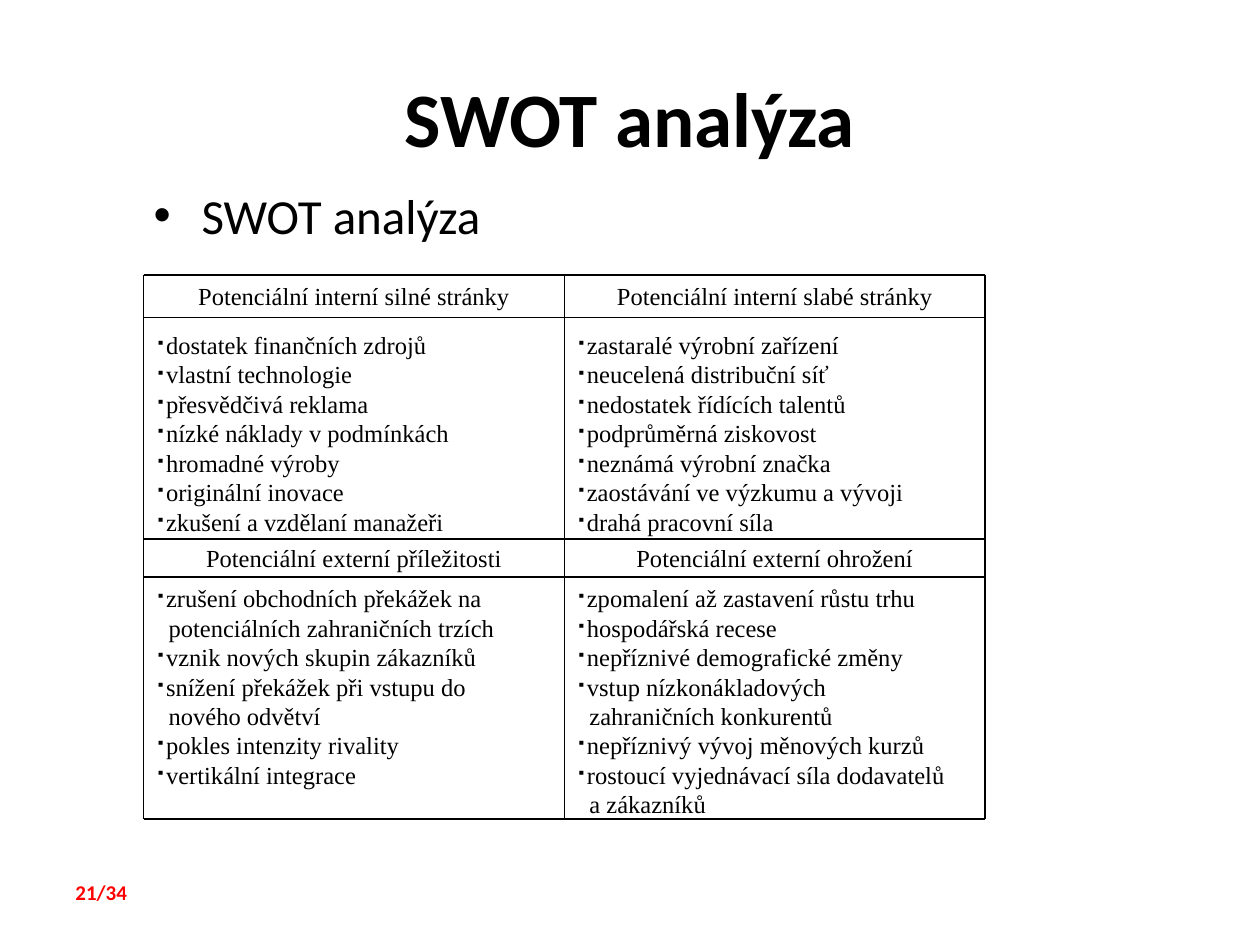
from lxml.etree import SubElement
from pptx import Presentation
from pptx.dml.color import RGBColor
from pptx.enum.shapes import MSO_CONNECTOR
from pptx.enum.text import MSO_ANCHOR, PP_ALIGN
from pptx.oxml.ns import qn
from pptx.util import Inches, Pt

BLACK = RGBColor(0, 0, 0)
RED = RGBColor(255, 0, 0)
HEADING_FONT = "Calibri"
GRID_FONT = "Times New Roman"

# Each row of quadrants holds (heading, items); a line break starts a continuation line.
INTERNAL = [
    ("Potenciální interní silné stránky", [
        "dostatek finančních zdrojů",
        "vlastní technologie",
        "přesvědčivá reklama",
        "nízké náklady v\u00a0podmínkách",
        "hromadné výroby",
        "originální inovace",
        "zkušení a vzdělaní manažeři",
    ]),
    ("Potenciální interní slabé stránky", [
        "zastaralé výrobní zařízení",
        "neucelená distribuční síť",
        "nedostatek řídících talentů",
        "podprůměrná ziskovost",
        "neznámá výrobní značka",
        "zaostávání ve výzkumu a vývoji",
        "drahá pracovní síla",
    ]),
]
EXTERNAL = [
    ("Potenciální externí příležitosti", [
        "zrušení obchodních překážek na\npotenciálních zahraničních trzích",
        "vznik nových skupin zákazníků",
        "snížení překážek při vstupu do\nnového odvětví",
        "pokles intenzity rivality",
        "vertikální integrace",
    ]),
    ("Potenciální externí ohrožení", [
        "zpomalení až zastavení růstu trhu",
        "hospodářská recese",
        "nepříznivé demografické změny",
        "vstup nízkonákladových\nzahraničních konkurentů",
        "nepříznivý vývoj měnových kurzů",
        "rostoucí vyjednávací síla dodavatelů\na zákazníků",
    ]),
]


def place(shape, left, top, width, height):
    shape.left, shape.top = Inches(left), Inches(top)
    shape.width, shape.height = Inches(width), Inches(height)


def set_font(paragraph, name, size, color=BLACK, bold=False):
    font = paragraph.font
    font.name, font.size, font.bold = name, Pt(size), bold
    font.color.rgb = color


def set_bullet(paragraph, char, margin, hanging, percent=100):
    properties = paragraph._p.get_or_add_pPr()
    properties.set("marL", str(Inches(margin)))
    properties.set("indent", str(-Inches(hanging)))
    if char:
        SubElement(properties, qn("a:buSzPct"), val=str(percent * 1000))
        SubElement(properties, qn("a:buChar"), char=char)
    else:
        SubElement(properties, qn("a:buNone"))


def add_text_frame(slide, left, top, width, height):
    box = slide.shapes.add_textbox(
        Inches(left), Inches(top), Inches(width), Inches(height))
    box.text_frame.word_wrap = True
    return box.text_frame


def add_rule(slide, x1, y1, x2, y2):
    rule = slide.shapes.add_connector(
        MSO_CONNECTOR.STRAIGHT, Inches(x1), Inches(y1), Inches(x2), Inches(y2))
    rule.line.color.rgb = BLACK
    rule.line.width = Pt(1)
    SubElement(rule._element.spPr, qn("a:effectLst"))


def fill_title(slide, left, top, width, height):
    title = slide.shapes.title
    place(title, left, top, width, height)
    title.text_frame.text = "SWOT analýza"
    set_font(title.text_frame.paragraphs[0], HEADING_FONT, 44, bold=True)


def fill_body(slide, left, top, width, height):
    body = slide.placeholders[1]
    place(body, left, top, width, height)
    body.text_frame.text = "SWOT analýza"
    topic = body.text_frame.paragraphs[0]
    topic.level = 1
    set_bullet(topic, "•", 1, 0.38)
    set_font(topic, HEADING_FONT, 28)


def add_page_number(slide, left, top, width, height):
    frame = add_text_frame(slide, left, top, width, height)
    frame.text = "21/34"
    set_font(frame.paragraphs[0], HEADING_FONT, 12, RED, bold=True)


def add_heading(slide, text, left, top, width, height):
    frame = add_text_frame(slide, left, top, width, height)
    frame.vertical_anchor = MSO_ANCHOR.MIDDLE
    frame.text = text
    heading = frame.paragraphs[0]
    heading.alignment = PP_ALIGN.CENTER
    set_font(heading, GRID_FONT, 14)


def add_items(slide, items, left, top, width, height):
    frame = add_text_frame(slide, left, top, width, height)
    frame.text = "\n".join(items)
    bullets = [char for item in items
               for char in ["▪"] + [None] * item.count("\n")]
    for paragraph, char in zip(frame.paragraphs, bullets):
        if char:
            set_bullet(paragraph, char, 0.08, 0.08, percent=50)
        else:
            set_bullet(paragraph, None, 0.1, 0)
        set_font(paragraph, GRID_FONT, 14)


def add_swot_grid(slide, left, top, width, height):
    column = width / 2
    heading_tops = [0, 2.1]
    items_tops = [0.34, 2.4]
    items_bottoms = [2.1, height]
    item_gaps = [0.05, 0]

    for row, quadrants in enumerate([INTERNAL, EXTERNAL]):
        heading_top, items_top = heading_tops[row], items_tops[row]
        list_top = items_top + item_gaps[row]
        for index, (heading, items) in enumerate(quadrants):
            x = left + index * column
            add_heading(slide, heading, x, top + heading_top,
                        column, items_top - heading_top)
            add_items(slide, items, x, top + list_top,
                      column, items_bottoms[row] - list_top)

    for y in sorted(heading_tops + items_tops + [height]):
        add_rule(slide, left, top + y, left + width, top + y)
    for index in range(3):
        x = left + index * column
        add_rule(slide, x, top, x, top + height)


def main():
    deck = Presentation()
    deck.slide_width, deck.slide_height = Inches(10), Inches(7.5)
    slide = deck.slides.add_slide(deck.slide_layouts[1])
    fill_title(slide, 0.5, 0.3, 9, 1.25)
    fill_body(slide, 0.5, 1.42, 9, 4.95)
    add_page_number(slide, 0.5, 6.93, 0.92, 0.3)
    add_swot_grid(slide, 1.14, 2.18, 6.68, 4.32)
    deck.save("out.pptx")


if __name__ == "__main__":
    main()
